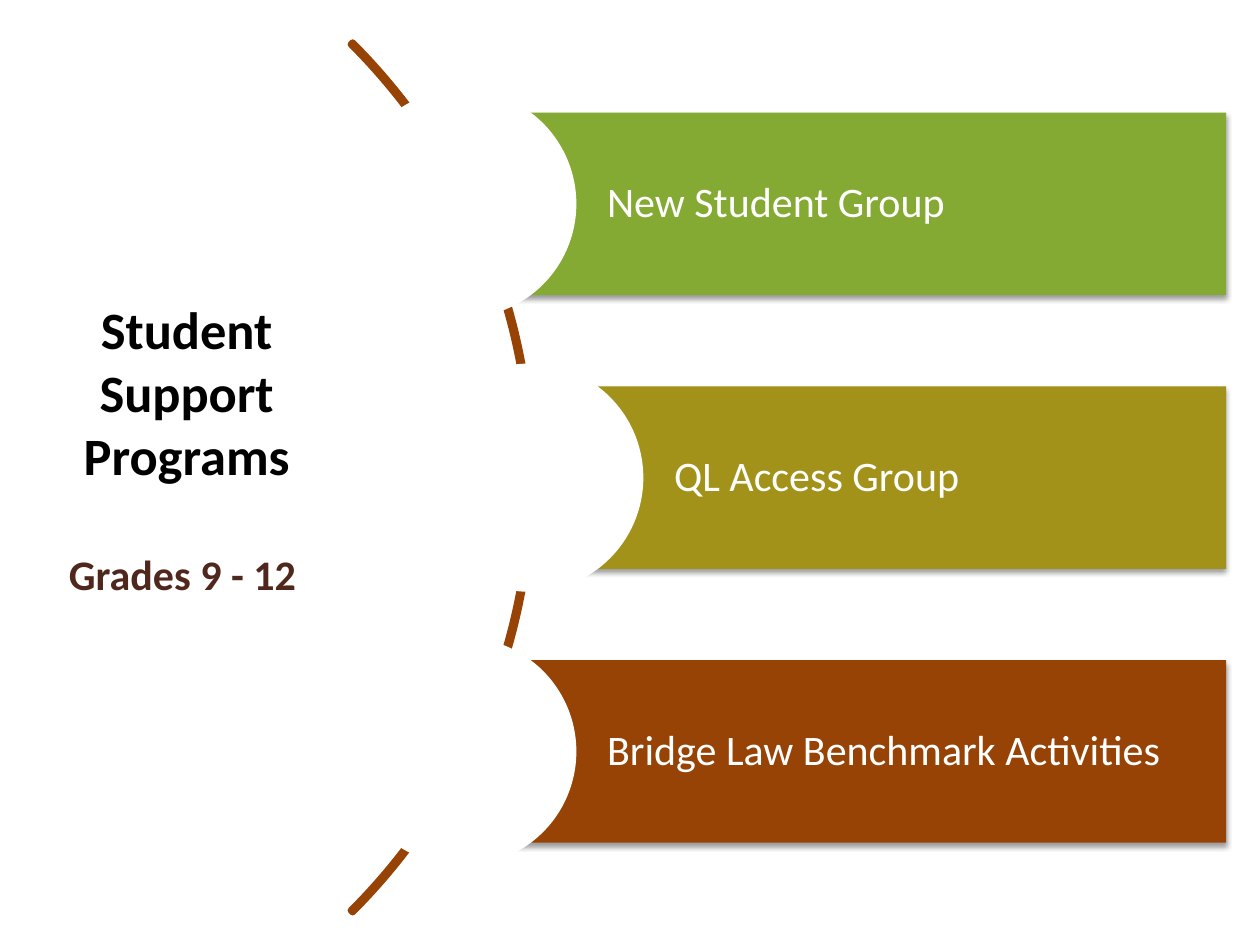
from lxml import etree
from pptx import Presentation
from pptx import util as u
from pptx.dml.color import RGBColor
from pptx.enum import shapes, text
from pptx.oxml import ns

COLORS = {
    "green": "84AA33",
    "olive": "A39219",
    "rust": "964305",
    "white": "FFFFFF",
    "black": "000000",
    "brown": "4F271C",
}
PROGRAMS = [
    ("New Student Group", "green", 9.32),
    ("QL Access Group", "olive", 10.67),
    ("Bridge Law Benchmark Activities", "rust", 9.32),
]
BAR_TOP, BAR_STEP, BAR_HEIGHT, BAR_RIGHT = 2.27, 5.52, 3.68, 24.72
NODE_SIZE = 4.6
ARC_SIZE = 24.79
FRAME = {"word_wrap": True, "vertical_anchor": text.MSO_ANCHOR.MIDDLE}


def rgb(name):
    return RGBColor.from_string(COLORS[name])


def apply(target, values):
    for key, value in values.items():
        setattr(target, key, value)


def write(holder, words, color, insets, frame, paragraph, font):
    body = holder.text_frame
    sides = ("margin_left", "margin_top", "margin_right", "margin_bottom")
    apply(body, frame)
    apply(body, {side: u.Cm(inset) for side, inset in zip(sides, insets)})
    line = body.paragraphs[0]
    apply(line, paragraph)
    run = line.add_run()
    run.text = words
    apply(run.font, {"name": "Calibri", **font})
    run.font.color.rgb = rgb(color)


def add_solid(parent, kind, box, color):
    solid = parent.add_shape(kind, *map(u.Cm, box))
    solid.shadow.inherit = False
    solid.fill.solid()
    solid.fill.fore_color.rgb = rgb(color)
    solid.line.fill.background()
    return solid


def cast_shadow(bar):
    effects = bar._element.spPr.find(ns.qn("a:effectLst"))
    shadow = etree.SubElement(
        effects, ns.qn("a:outerShdw"), blurRad=str(u.Pt(3.1)),
        dist=str(u.Pt(2)), dir="5400000", rotWithShape="0")
    tint = etree.SubElement(shadow, ns.qn("a:srgbClr"), val=COLORS["black"])
    etree.SubElement(tint, ns.qn("a:alpha"), val="38000")


def add_arc(parent):
    arc = parent.add_shape(shapes.MSO_SHAPE.BLOCK_ARC, u.Cm(-14.05), u.Cm(-2.77),
                           u.Cm(ARC_SIZE), u.Cm(ARC_SIZE))
    arc.shadow.inherit = False
    for index, value in enumerate((189, 27, 0.002)):
        arc.adjustments[index] = value
    arc.fill.background()
    arc.line.color.rgb = rgb("rust")
    arc.line.width = u.Pt(3.78)


def add_program(parent, row, words, color, left):
    top = BAR_TOP + row * BAR_STEP
    bar = add_solid(parent, shapes.MSO_SHAPE.RECTANGLE,
                    (left, top, BAR_RIGHT - left, BAR_HEIGHT), color)
    cast_shadow(bar)
    write(bar, words, "white", (2.92, 0.18, 0.18, 0.18), FRAME,
          {"alignment": text.PP_ALIGN.LEFT, "line_spacing": 0.9},
          {"size": u.Pt(24)})
    node_top = top + (BAR_HEIGHT - NODE_SIZE) / 2
    add_solid(parent, shapes.MSO_SHAPE.OVAL,
              (left - NODE_SIZE / 2, node_top, NODE_SIZE, NODE_SIZE), "white")


def add_heading(slide, box, words, color, size, insets, anchor, space_after):
    heading = slide.shapes.add_textbox(*map(u.Cm, box))
    write(heading, words, color, insets,
          {**FRAME, "vertical_anchor": anchor},
          {"alignment": text.PP_ALIGN.CENTER, "space_after": u.Pt(space_after)},
          {"size": u.Pt(size), "bold": True})


def main():
    deck = Presentation()
    apply(deck, {"slide_width": u.Cm(25.4), "slide_height": u.Cm(19.05)})
    slide = deck.slides.add_slide(deck.slide_layouts[6])
    diagram = slide.shapes.add_group_shape().shapes
    add_arc(diagram)
    for row, program in enumerate(PROGRAMS):
        add_program(diagram, row, *program)
    add_heading(slide, (0.43, 5.28, 6.6, 5.08), "Student Support Programs",
                "black", 30, (0.2, 0.13, 0.13, 0), text.MSO_ANCHOR.MIDDLE, 36)
    add_heading(slide, (0.43, 10.8, 6.6, 2.11), "Grades 9 - 12",
                "brown", 24, (0.15, 0.25, 0.25, 0.13), text.MSO_ANCHOR.TOP, 0)
    deck.save("out.pptx")


if __name__ == "__main__":
    main()
